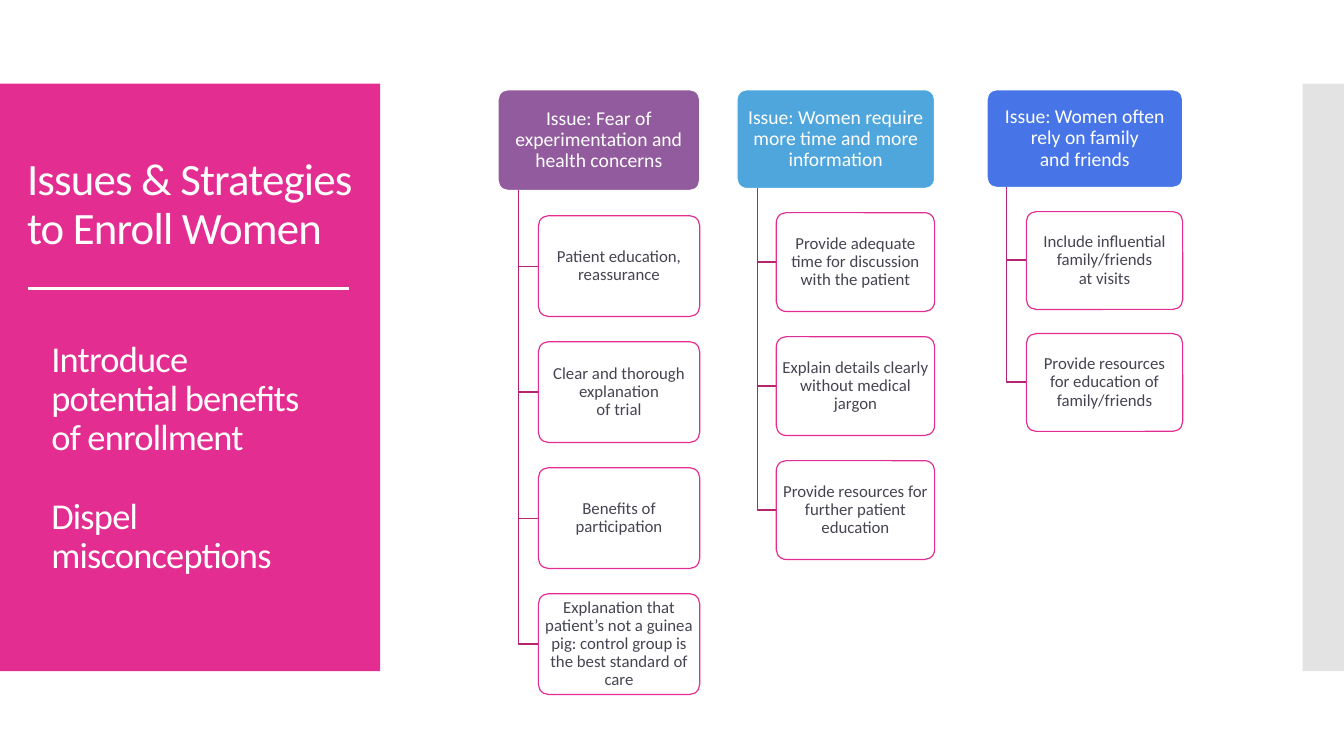
from dataclasses import dataclass

from lxml.etree import SubElement
from pptx import Presentation
from pptx.dml.color import RGBColor
from pptx.enum.shapes import MSO_CONNECTOR, MSO_SHAPE
from pptx.enum.text import MSO_ANCHOR, PP_ALIGN
from pptx.oxml.ns import qn
from pptx.util import Pt

PX = 9144


@dataclass(frozen=True)
class Theme:
    font: str = "Calibri"
    pink: str = "E32D91"
    branch: str = "B62474"
    white: str = "FFFFFF"
    ink: str = "454551"
    grey: str = "C8C8C8"
    purple: str = "925B9D"
    sky: str = "4EA6DC"
    blue: str = "4775E7"
    title: int = 32
    aside: int = 26
    issue: int = 14
    strategy: int = 12
    hairline: float = 0.85
    rule: float = 2.25


def apply(target, values):
    for name, value in values.items():
        setattr(target, name, value)


class SlideBuilder:
    def __init__(self, slide, theme):
        self.shapes = slide.shapes
        self.theme = theme

    def paint(self, shape, fill, opacity=100):
        shape.shadow.inherit = False
        shape.fill.solid()
        shape.fill.fore_color.rgb = RGBColor.from_string(fill)
        if opacity < 100:
            color = shape._element.spPr.find(qn("a:solidFill"))[0]
            SubElement(color, qn("a:alpha"), val=str(opacity * 1000))

    def stroke(self, shape, color, width):
        shape.line.color.rgb = RGBColor.from_string(color)
        shape.line.width = Pt(width)

    def typeset(self, frame, paragraphs, size, color, frame_format,
                paragraph_format, gap=0, tracking=0):
        apply(frame, {"word_wrap": True, **frame_format})
        for index, words in enumerate(paragraphs):
            paragraph = frame.add_paragraph() if index else frame.paragraphs[0]
            paragraph.text = words.replace("\n", "\v")
            apply(paragraph, {"line_spacing": 0.9, **paragraph_format})
            if index:
                paragraph.space_before = Pt(gap)
            for run in paragraph.runs:
                apply(run.font, {"name": self.theme.font, "size": Pt(size)})
                run.font.color.rgb = RGBColor.from_string(color)
                if tracking:
                    run._r.get_or_add_rPr().set("spc", str(tracking))

    def panel(self, left, top, width, height, fill, opacity=100):
        panel = self.shapes.add_shape(
            MSO_SHAPE.RECTANGLE, left * PX, top * PX, width * PX, height * PX)
        self.paint(panel, fill, opacity)
        panel.line.fill.background()

    def text(self, left, top, width, height, paragraphs, size, indent=10, gap=0):
        box = self.shapes.add_textbox(left * PX, top * PX, width * PX, height * PX)
        self.typeset(box.text_frame, paragraphs, size, self.theme.white,
                     {"margin_left": indent * PX, "vertical_anchor": MSO_ANCHOR.TOP},
                     {"alignment": PP_ALIGN.LEFT}, gap, tracking=-60)

    def rule(self, left, right, y):
        rule = self.shapes.add_connector(
            MSO_CONNECTOR.STRAIGHT, left * PX, y * PX, right * PX, y * PX)
        self.stroke(rule, self.theme.white, self.theme.rule)
        SubElement(rule._element.spPr, qn("a:effectLst"))

    def card(self, left, top, width, height, words, size, color, fill, outline,
             opacity=100):
        card = self.shapes.add_shape(
            MSO_SHAPE.ROUNDED_RECTANGLE, left * PX, top * PX, width * PX, height * PX)
        card.adjustments[0] = 0.1
        self.paint(card, fill, opacity)
        self.stroke(card, outline, self.theme.hairline)
        self.typeset(card.text_frame, [words], size, color,
                     {"margin_left": 3 * PX, "margin_right": 3 * PX,
                      "margin_top": 2 * PX, "margin_bottom": 2 * PX,
                      "vertical_anchor": MSO_ANCHOR.MIDDLE},
                     {"alignment": PP_ALIGN.CENTER})

    def elbow(self, trunk, top, right, bottom):
        outline = self.shapes.build_freeform(trunk, top, scale=PX)
        outline.add_line_segments([(trunk, bottom), (right, bottom)], close=False)
        elbow = outline.convert_to_shape()
        elbow.shadow.inherit = False
        elbow.fill.background()
        self.stroke(elbow, self.theme.branch, self.theme.hairline)

    def issue_column(self, left, width, fill, issue, strategies):
        theme, top, height = self.theme, 89, width // 2
        self.card(left, top, width, height, issue, theme.issue, theme.white,
                  fill, theme.white)
        trunk = left + round(width * 0.1)
        inner_left = left + round(width * 0.2)
        inner_width = round(width * 0.8)
        for row, strategy in enumerate(strategies, start=1):
            row_top = top + round(row * height * 1.25)
            self.elbow(trunk, top + height, inner_left, row_top + height // 2)
            self.card(inner_left, row_top, inner_width, height, strategy,
                      theme.strategy, theme.ink, theme.white, theme.pink, 90)


ISSUES = [
    (494, 200, Theme.purple, "Issue: Fear of experimentation and health concerns", [
        "Patient education, reassurance",
        "Clear and thorough\nexplanation\nof trial",
        "Benefits of participation",
        "Explanation that patient’s not a guinea pig: "
        "control group is the best standard of care",
    ]),
    (731, 196, Theme.sky, "Issue: Women require more time and more information", [
        "Provide adequate time for discussion with the patient",
        "Explain details clearly without medical jargon",
        "Provide resources for further patient education",
    ]),
    (979, 194, Theme.blue, "Issue: Women often rely on family\nand friends", [
        "Include influential family/friends\nat visits",
        "Provide resources for education of family/friends",
    ]),
]


def main():
    presentation = Presentation()
    apply(presentation, {"slide_width": 1333 * PX, "slide_height": 750 * PX})
    theme = Theme()
    builder = SlideBuilder(
        presentation.slides.add_slide(presentation.slide_layouts[6]), theme)

    builder.panel(0, 83, 377, 583, theme.pink)
    builder.panel(1292, 83, 41, 583, theme.grey, 50)
    builder.text(17, 151, 350, 182, ["Issues & Strategies to Enroll Women"], theme.title)
    builder.rule(28, 346, 286)
    builder.text(28, 333, 322, 182,
                 ["Introduce\npotential benefits\nof enrollment",
                  "Dispel\nmisconceptions"],
                 theme.aside, indent=23, gap=28)
    for issue in ISSUES:
        builder.issue_column(*issue)

    presentation.save("out.pptx")


if __name__ == "__main__":
    main()
